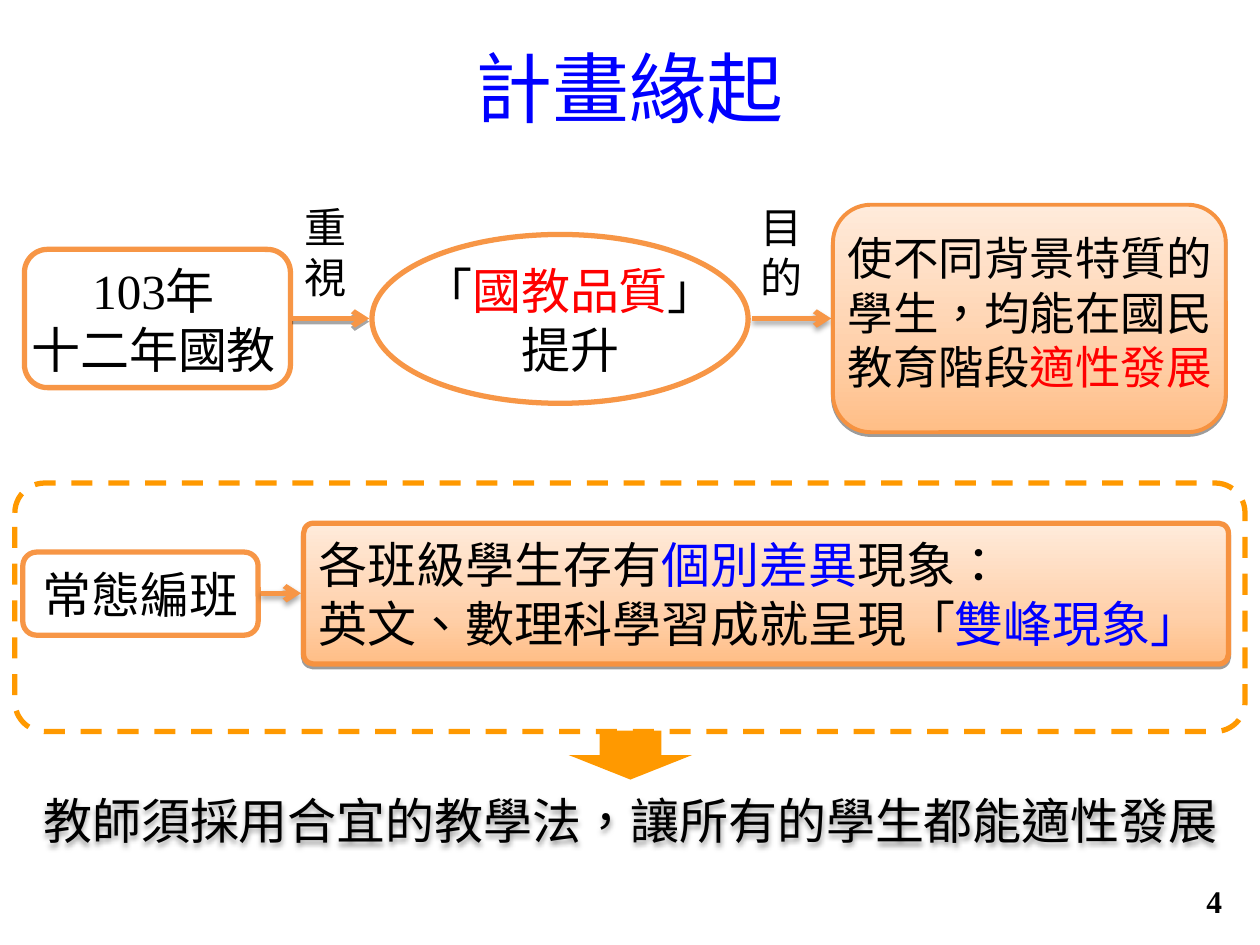
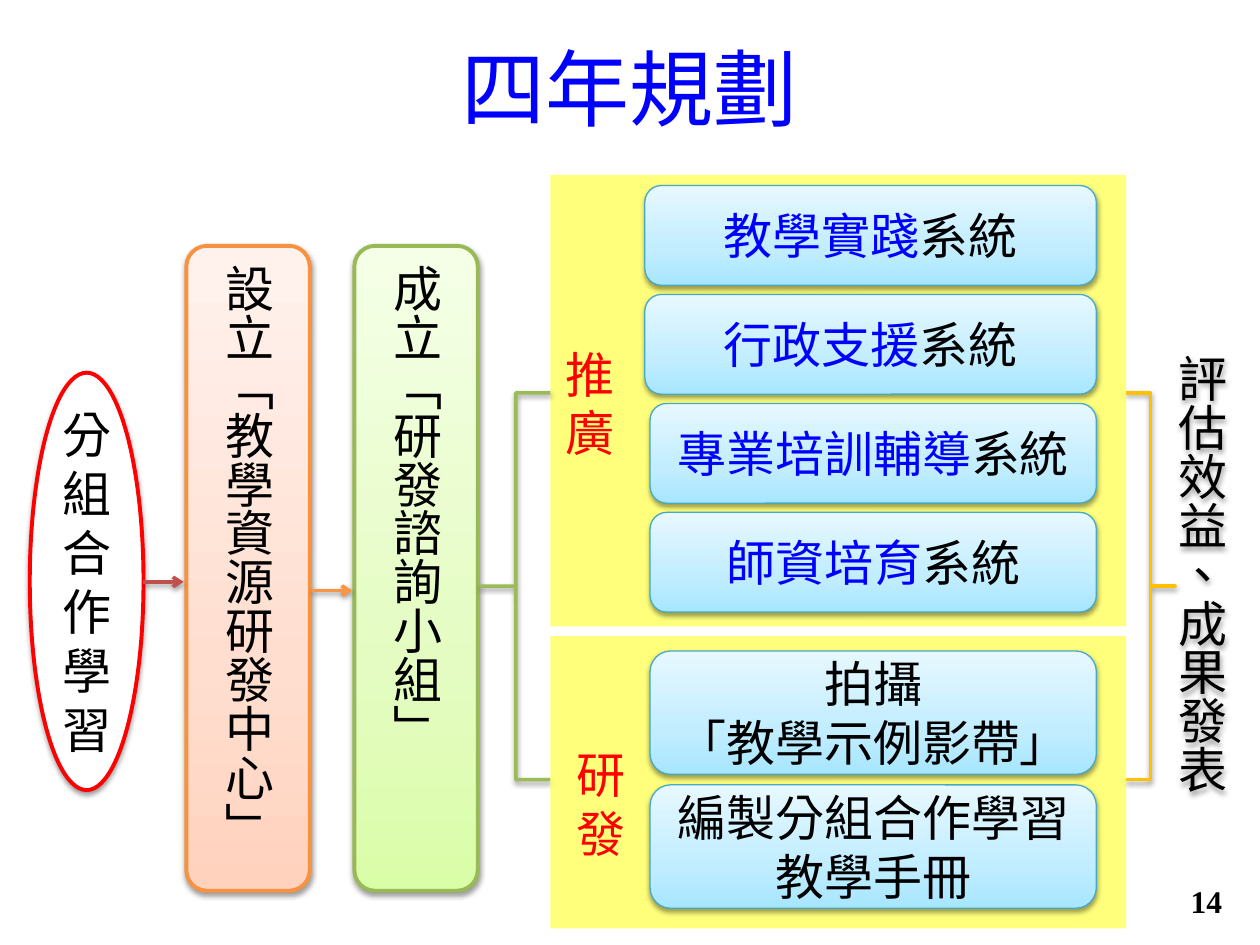
from lxml.etree import SubElement
from pptx import Presentation
from pptx.dml.color import RGBColor
from pptx.enum.dml import MSO_LINE
from pptx.enum.lang import MSO_LANGUAGE_ID
from pptx.enum.shapes import MSO_CONNECTOR, MSO_SHAPE
from pptx.enum.text import MSO_ANCHOR, PP_ALIGN
from pptx.oxml.ns import qn
from pptx.util import Pt

COLORS = {
    "black": "000000", "white": "FFFFFF", "blue": "0000FF", "red": "FF0000",
    "orange": "F79646", "orange_edge": "F69240", "amber": "FF9900",
    "gold": "FFC000", "yellow": "FFFF4F", "green": "9BBB59",
    "green_edge": "98B955", "aqua_edge": "46AAC5", "brick": "C0504D",
}
GRADIENTS = {
    "orange": ("FFBE86", "FFD0AA", "FFEBDB"),
    "peach": ("FFD2BD", "FFDED0", "FFF2ED"),
    "green": ("DAFDA7", "E4FCC2", "F5FFE7"),
    "aqua": ("A7E6FF", "C1EDFF", "E7F8FF"),
}
STOPS = (0, 35, 100)
SERIF = "Times New Roman"
SANS = "Noto Sans CJK SC"
SOFT = (38, 3.1, 1.6)
CRISP = (38, 0, 1.6)


def color(name):
    return RGBColor.from_string(COLORS[name])


def add_shadow(element, shadow):
    properties = element.spPr
    effects = properties.find(qn("a:effectLst"))
    if effects is None:
        effects = SubElement(properties, qn("a:effectLst"))
    if shadow:
        opacity, blur, distance = shadow
        outer = SubElement(effects, qn("a:outerShdw"), blurRad=str(Pt(blur)),
                           dist=str(Pt(distance)), dir="5400000", rotWithShape="0")
        shade = SubElement(outer, qn("a:srgbClr"), val=COLORS["black"])
        SubElement(shade, qn("a:alpha"), val=str(opacity * 1000))


def fill_gradient(shape, name):
    shape.fill.gradient()
    shape.fill.gradient_angle = 90
    stops = shape._element.spPr.find(qn("a:gradFill")).find(qn("a:gsLst"))
    for stop in list(stops):
        stops.remove(stop)
    for position, shade in zip(STOPS, GRADIENTS[name]):
        stop = SubElement(stops, qn("a:gs"), pos=str(position * 1000))
        SubElement(stop, qn("a:srgbClr"), val=shade)


def write(shape, paragraphs, size=28, font=SERIF, align=PP_ALIGN.CENTER,
          anchor=MSO_ANCHOR.MIDDLE, bold=False, vertical=False):
    frame = shape.text_frame
    frame.word_wrap = True
    frame.vertical_anchor = anchor
    if vertical:
        frame._txBody.bodyPr.set("vert", "eaVert")
    for index, parts in enumerate(paragraphs):
        para = frame.add_paragraph() if index else frame.paragraphs[0]
        para.alignment = align
        for text, shade in parts:
            if text == "\n":
                para.add_line_break()
                continue
            span = para.add_run()
            span.text = text
            span.font.size = Pt(size)
            span.font.name = font
            span.font.bold = bold
            span.font.color.rgb = color(shade)
            span.font.language_id = MSO_LANGUAGE_ID.TRADITIONAL_CHINESE
            SubElement(span.font._element, qn("a:ea"), typeface=SANS)


def add_text(page, bounds, paragraphs, shadow=None, **style):
    box = page.shapes.add_textbox(*map(Pt, bounds))
    write(box, paragraphs, **style)
    if shadow:
        add_shadow(box._element, shadow)


def add_figure(page, kind, bounds, fill=None, gradient=None, line=None, width=3,
               shadow=None, adjust=(), paragraphs=(), **style):
    shape = page.shapes.add_shape(kind, *map(Pt, bounds))
    for index, value in enumerate(adjust):
        shape.adjustments[index] = value
    if gradient:
        fill_gradient(shape, gradient)
    elif fill:
        shape.fill.solid()
        shape.fill.fore_color.rgb = color(fill)
    else:
        shape.fill.background()
    if line:
        shape.line.color.rgb = color(line)
        shape.line.width = Pt(width)
    else:
        shape.line.fill.background()
    shape.shadow.inherit = False
    add_shadow(shape._element, shadow)
    if paragraphs:
        write(shape, paragraphs, **style)
    return shape


def add_arrow(page, left, right, top, shade, width, shadow):
    arrow = page.shapes.add_connector(
        MSO_CONNECTOR.STRAIGHT, Pt(left), Pt(top), Pt(right), Pt(top))
    arrow.line.color.rgb = color(shade)
    arrow.line.width = Pt(width)
    SubElement(arrow.line._get_or_add_ln(), qn("a:tailEnd"), type="arrow")
    add_shadow(arrow._element, shadow)


def add_panel(page, top, height):
    panel = add_figure(page, MSO_SHAPE.RECTANGLE, (314.5, top, 329, height), "yellow")
    shade = panel._element.spPr.find(qn("a:solidFill"))[0]
    SubElement(shade, qn("a:alpha"), val="75000")


def add_card(page, left, top, height, paragraphs):
    add_figure(page, MSO_SHAPE.ROUNDED_RECTANGLE, (left, top, 626.5 - left, height),
               gradient="aqua", line="aqua_edge", width=0.75, shadow=SOFT,
               paragraphs=paragraphs, font=SANS)


def add_page(deck, title, title_size):
    page = deck.slides.add_slide(deck.slide_layouts[6])
    add_text(page, (36, 4.5, 648, 90), [[(title, "blue")]], size=title_size)
    return page


def add_number(page, number):
    add_text(page, (538, 500.5, 167.5, 28.5), [[(number, "black")]], size=18,
             align=PP_ALIGN.RIGHT, bold=True)


def build_origin(deck):
    page = add_page(deck, "計畫緣起", 44)
    rounded = MSO_SHAPE.ROUNDED_RECTANGLE
    add_arrow(page, 430, 475, 182, "orange", 3, (35, 3.1, 1.8))
    add_figure(page, rounded, (476, 117, 224.5, 130), gradient="orange",
               line="orange_edge", width=2.25, shadow=CRISP)
    add_figure(page, rounded, (14, 142.5, 152, 79), "white", line="orange")
    add_arrow(page, 167, 211, 182, "orange", 3, (35, 0, 1.8))
    add_figure(page, MSO_SHAPE.OVAL, (212.5, 134, 215, 96.5), "white", line="orange")

    for label, left, width in (("重視", 167, 46), ("目的", 427.5, 42.5)):
        add_text(page, (left, 111.5, width, 65), [[(label, "black")]], size=24,
                 font=SANS, align=PP_ALIGN.LEFT, anchor=MSO_ANCHOR.TOP)
    add_text(page, (206.5, 145.5, 238.5, 74),
             [[("「", "black"), ("國教品質", "red"), ("」", "black")],
              [("提升", "black")]], anchor=MSO_ANCHOR.TOP)
    add_text(page, (0, 145.5, 175.5, 74),
             [[("103年", "black"), ("\n", "black"), ("十二年國教", "black")]],
             anchor=MSO_ANCHOR.TOP)
    add_text(page, (468, 128, 241, 101),
             [[("使不同背景特質的學生，均能在國民教育階段", "black"),
               ("適性發展", "red")]], size=26, anchor=MSO_ANCHOR.TOP)

    add_figure(page, rounded, (13, 315.5, 134.5, 47.5), "white", line="orange",
               paragraphs=[[("常態編班", "black")]])
    add_arrow(page, 149, 172, 339, "orange", 3, (35, 3.1, 1.8))
    add_figure(page, rounded, (173.5, 299, 528.5, 80.5), gradient="orange",
               line="orange_edge", shadow=CRISP, adjust=[0.07],
               paragraphs=[
                   [("各班級學生存有", "black"), ("個別差異", "blue"),
                    ("現象：", "black")],
                   [("英文、數理科學習成就呈現「", "black"), ("雙峰現象」", "blue")]],
               align=PP_ALIGN.LEFT)
    frame = add_figure(page, rounded, (8.5, 276, 703, 142), line="amber", adjust=[0.12])
    frame.line.dash_style = MSO_LINE.DASH
    add_figure(page, MSO_SHAPE.DOWN_ARROW, (325, 417.5, 70.5, 28), "amber")
    add_text(page, (15, 440, 690.5, 57),
             [[("教師須採用合宜的教學法，讓所有的學生都能適性發展", "black")]],
             shadow=SOFT)
    add_number(page, "4")


def build_plan(deck):
    page = add_page(deck, "四年規劃", 48)
    rounded = MSO_SHAPE.ROUNDED_RECTANGLE
    add_figure(page, MSO_SHAPE.RIGHT_BRACE, (643.5, 224.5, 28, 221), line="gold",
               width=2, shadow=SOFT, adjust=[0, 0.5])
    add_panel(page, 100, 258)
    add_figure(page, MSO_SHAPE.OVAL, (17, 213, 65, 238.5), "white", line="red",
               width=2.25, shadow=SOFT, paragraphs=[[("分組合作學習", "black")]],
               font=SANS)

    bars = (("設立「教學資源研發中心」", "peach", "orange_edge"),
            ("成立「研發諮詢小組」", "green", "green_edge"))
    for index, (label, gradient, edge) in enumerate(bars):
        add_figure(page, rounded, (106.5 + 96 * index, 140.5, 70.5, 368.5),
                   gradient=gradient, line=edge, width=2.25, shadow=SOFT,
                   paragraphs=[[(label, "black")]], font=SANS, vertical=True)

    systems = (("教學實踐", 368.5), ("行政支援", 368.5),
               ("專業培訓輔導", 371.5), ("師資培育", 371.5))
    for index, (name, left) in enumerate(systems):
        add_card(page, left, 106 + 62.25 * index, 57,
                 [[(name, "blue"), ("系統", "black")]])

    add_figure(page, rounded, (655, 191, 62.5, 283.5), shadow=SOFT, adjust=[0.24],
               paragraphs=[[("評估效益、成果發表", "black")]], font=SANS,
               vertical=True)
    add_figure(page, MSO_SHAPE.LEFT_BRACE, (275, 224.5, 39.5, 221), line="green",
               width=2, shadow=SOFT, adjust=[0, 0.5])
    add_text(page, (314.5, 185, 45.5, 90.5), [[("推廣", "red")]], font=SANS)

    add_panel(page, 363.5, 167)
    materials = ([[("拍攝", "black")], [("「教學示例影帶」", "black")]],
                 [[("編製分組合作學習教學手冊", "black")]])
    for index, paragraphs in enumerate(materials):
        add_card(page, 371.5, 372 + 76.5 * index, 70.5, paragraphs)
    add_figure(page, rounded, (320.5, 430, 39.5, 58.5),
               paragraphs=[[("研發", "red")]], font=SANS)
    add_arrow(page, 82, 105, 332.5, "brick", 2, SOFT)
    add_arrow(page, 178.5, 201.5, 337.5, "orange", 2, SOFT)
    add_number(page, "14")


def main():
    deck = Presentation()
    deck.slide_width, deck.slide_height = Pt(720), Pt(540)
    build_origin(deck)
    build_plan(deck)
    deck.save("out.pptx")


if __name__ == "__main__":
    main()
